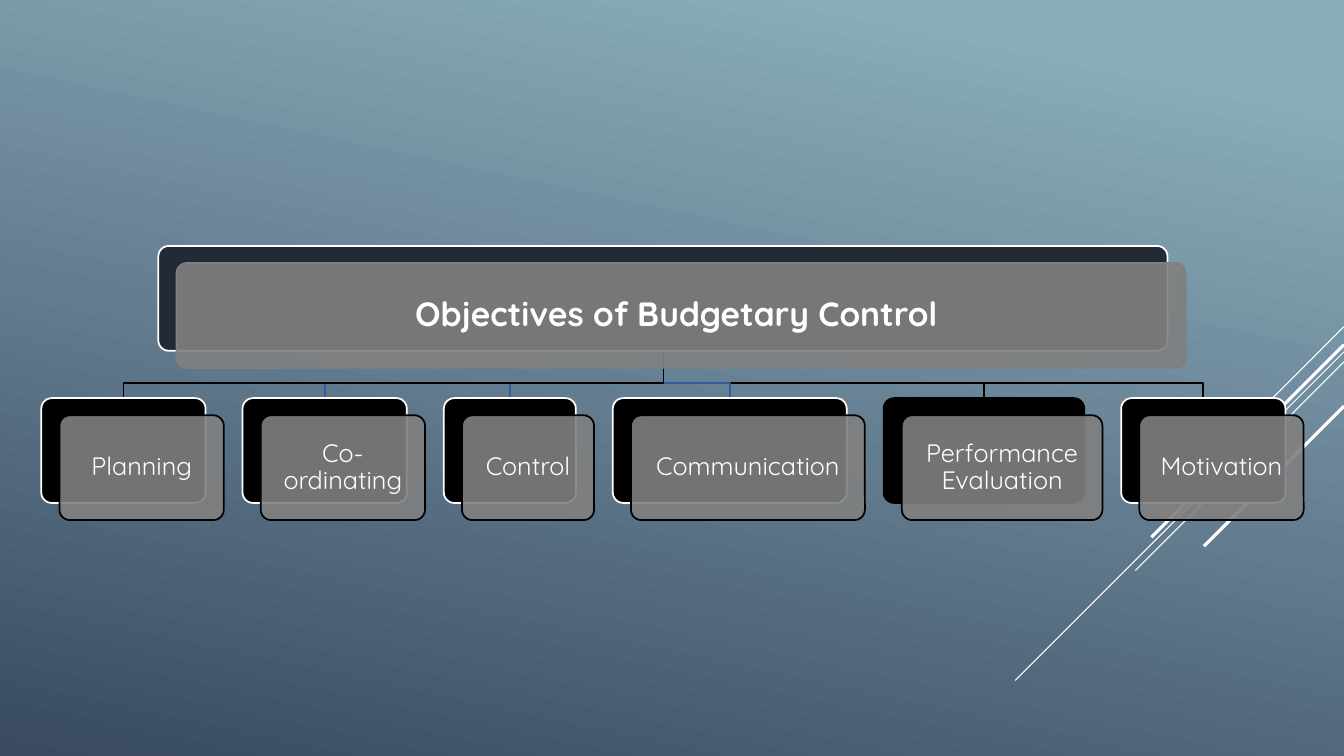
from dataclasses import dataclass

from lxml import etree
from pptx import Presentation
from pptx.dml.color import RGBColor
from pptx.enum.shapes import MSO_CONNECTOR, MSO_SHAPE
from pptx.enum.text import MSO_ANCHOR, MSO_AUTO_SIZE, PP_ALIGN
from pptx.oxml.ns import qn
from pptx.shapes.base import BaseShape
from pptx.slide import Slide
from pptx.util import Inches, Pt

ROUND = MSO_SHAPE.ROUNDED_RECTANGLE
STRAIGHT = MSO_CONNECTOR.STRAIGHT
MIDDLE = MSO_ANCHOR.MIDDLE
CENTER = PP_ALIGN.CENTER
NO_FIT = MSO_AUTO_SIZE.NONE

FONT = "Quicksand"
WHITE, BLACK, GREY, BLUE, NAVY = "FFFFFF", "000000", "808080", "365B9D", "222A35"
WIDTH, HEIGHT = 13.33, 7.5
CARD_H = 1.04
SHIFT_X, SHIFT_Y = 0.18, 0.17
INSET = 0.03
TRUNK_X, TRUNK_Y, BUS_Y, ROW_Y = 6.58, 3.47, 3.8, 3.95
ROW_LEFT, ROW_RIGHT = 0.41, 12.75


@dataclass
class Ray:
    """A diagonal line from the right edge, going down and left."""
    top: float
    run: float
    weight: float


@dataclass
class Goal:
    """One objective under the heading."""
    text: str
    width: float
    branch: str = BLACK
    edge: str = WHITE


RAYS = [
    Ray(3.24, 1.0, 0.75),
    Ray(3.49, 3.26, 0.75),
    Ray(3.59, 2.07, 0.75),
    Ray(3.42, 1.91, 2.25),
    Ray(4.03, 1.39, 2.25),
]
GOALS = [
    Goal("Planning", 1.63),
    Goal("Co-ordinating", 1.63, branch=BLUE),
    Goal("Control", 1.31, branch=BLUE),
    Goal("Communication", 2.32, branch=BLUE),
    Goal("Performance Evaluation", 1.99, edge=BLACK),
    Goal("Motivation", 1.63),
]


def color(code: str) -> RGBColor:
    """Turn a hex string into a colour."""
    return RGBColor.from_string(code)


def paint(slide: Slide) -> None:
    """Fill the background with the slanted gradient."""
    fill = slide.background.fill
    fill.gradient()
    fill.gradient_angle = 360 - 102
    for stop, (spot, code) in zip(fill.gradient_stops, [(0.1, "8AACBB"), (1.0, "394A61")]):
        stop.position = spot
        stop.color.rgb = color(code)


def draw_ray(slide: Slide, ray: Ray) -> None:
    """Draw one diagonal line."""
    line = slide.shapes.add_connector(
        STRAIGHT, Inches(WIDTH), Inches(ray.top),
        Inches(WIDTH - ray.run), Inches(ray.top + ray.run))
    line.line.color.rgb = color(WHITE)
    line.line.width = Pt(ray.weight)
    etree.SubElement(line.element.spPr, qn("a:effectLst"))


def draw_branch(slide: Slide, end: float, code: str) -> None:
    """Draw an elbow from the heading to the card centred on end."""
    pen = slide.shapes.build_freeform(Inches(TRUNK_X), Inches(TRUNK_Y))
    bends = [(TRUNK_X, BUS_Y), (end, BUS_Y), (end, ROW_Y)]
    pen.add_line_segments([(Inches(x), Inches(y)) for x, y in bends], close=False)
    elbow = pen.convert_to_shape()
    elbow.fill.background()
    elbow.line.color.rgb = color(code)
    elbow.line.width = Pt(1.25)
    elbow.shadow.inherit = False


def draw_box(slide: Slide, left: float, top: float, width: float,
             fill: str, edge: str, alpha: int = 100) -> None:
    """Draw a rounded box, see-through when alpha is under 100."""
    box = slide.shapes.add_shape(
        ROUND, Inches(left), Inches(top), Inches(width), Inches(CARD_H))
    box.adjustments[0] = 0.1
    box.shadow.inherit = False
    box.fill.solid()
    box.fill.fore_color.rgb = color(fill)
    box.line.color.rgb = color(edge)
    box.line.width = Pt(1.25)
    if alpha < 100:
        tint = box.element.spPr.find(qn("a:solidFill"))[0]
        etree.SubElement(tint, qn("a:alpha"), val=str(alpha * 1000))


def write(shape: BaseShape, text: str, *, size: float = 18,
          bold: bool = False, pad: float = 0.07) -> None:
    """Put centred white text in a shape."""
    frame = shape.text_frame
    frame.word_wrap = True
    frame.auto_size = NO_FIT
    frame.vertical_anchor = MIDDLE
    frame.margin_left = frame.margin_right = Inches(pad)
    frame.margin_top = frame.margin_bottom = Inches(pad)
    para = frame.paragraphs[0]
    para.alignment = CENTER
    para.line_spacing = 0.9
    para.space_after = Pt(size * 0.35)
    run = para.add_run()
    run.text = text
    run.font.name = FONT
    run.font.size = Pt(size)
    run.font.bold = bold
    run.font.color.rgb = color(WHITE)


def draw_card(slide: Slide, left: float, top: float, width: float,
              back: str, edge: str, rim: str) -> tuple[int, int, int, int]:
    """Draw a back box and its shifted front; return the area for text."""
    draw_box(slide, left, top, width, back, edge)
    left, top = left + SHIFT_X, top + SHIFT_Y
    draw_box(slide, left, top, width, GREY, rim, alpha=90)
    return (Inches(left + INSET), Inches(top + INSET),
            Inches(width - 2 * INSET), Inches(CARD_H - 2 * INSET))


def draw_head(slide: Slide) -> None:
    """Draw the heading card with the title on top of it."""
    area = draw_card(slide, 1.57, 2.44, 10.01, NAVY, WHITE, GREY)
    title = slide.shapes.title
    title.left, title.top, title.width, title.height = area
    write(title, "Objectives of Budgetary Control ", size=24, bold=True, pad=0.1)
    slide.shapes.element.append(title.element)


def main() -> None:
    """Build the slide and save it."""
    deck = Presentation()
    deck.slide_width, deck.slide_height = Inches(WIDTH), Inches(HEIGHT)
    slide = deck.slides.add_slide(deck.slide_layouts[5])
    paint(slide)
    for ray in RAYS:
        draw_ray(slide, ray)

    used = sum(goal.width for goal in GOALS)
    gap = (ROW_RIGHT - ROW_LEFT - used) / (len(GOALS) - 1)
    spots, left = [], ROW_LEFT
    for goal in GOALS:
        spots.append((goal, left))
        left += goal.width + gap

    for goal, left in reversed(spots):
        draw_branch(slide, left + goal.width / 2, goal.branch)
    draw_head(slide)
    for goal, left in spots:
        area = draw_card(slide, left, ROW_Y, goal.width, BLACK, goal.edge, BLACK)
        write(slide.shapes.add_textbox(*area), goal.text)
    deck.save("out.pptx")


if __name__ == "__main__":
    main()
